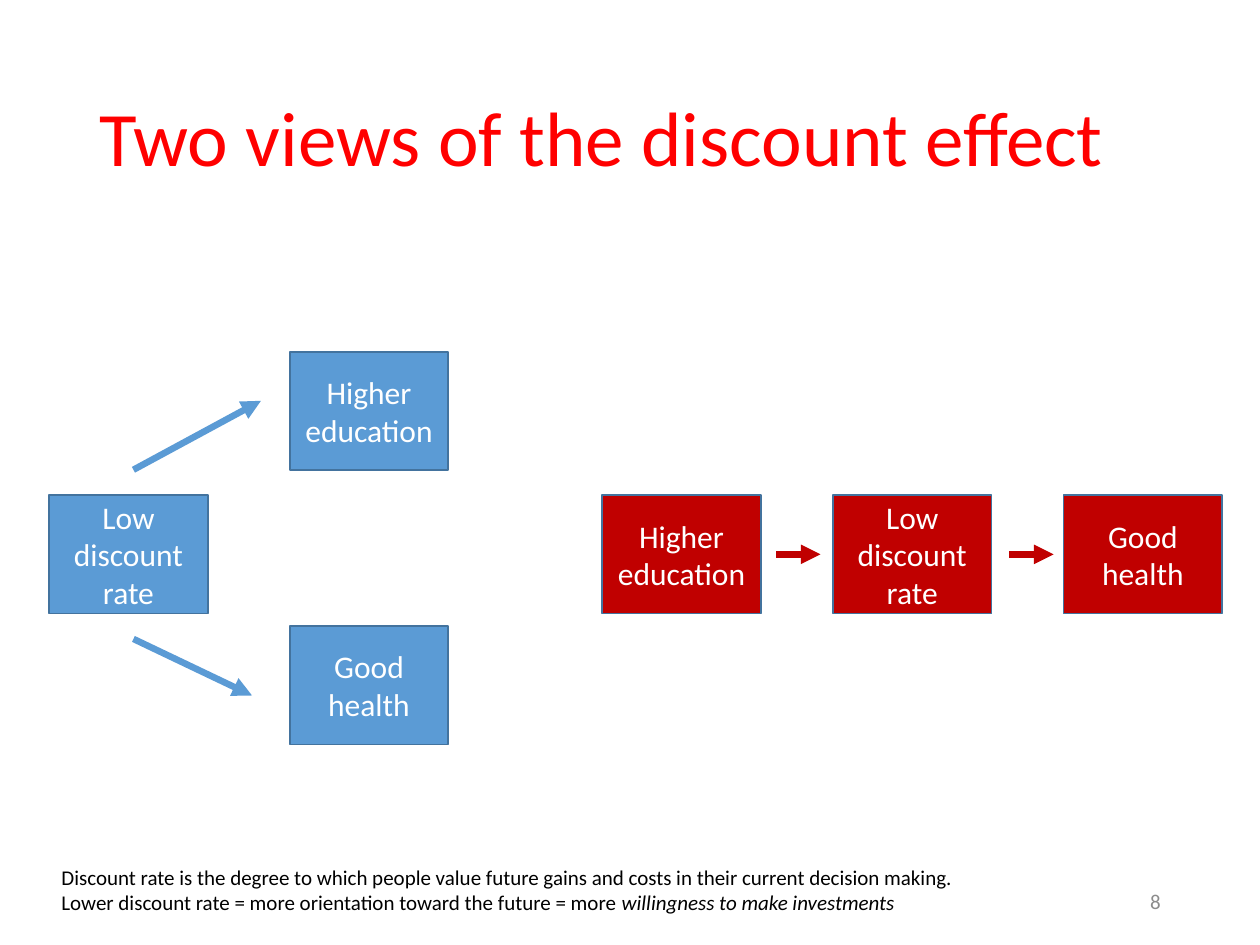
import dataclasses

import pptx
import pptx.dml.color
import pptx.enum.shapes
import pptx.enum.text
import pptx.oxml
import pptx.oxml.ns
import pptx.util
from pptx.util import Cm

ALIGN = pptx.enum.text.PP_ALIGN
ANCHOR = pptx.enum.text.MSO_ANCHOR
BOX_WIDTH, BOX_HEIGHT = 3.2, 2.39


@dataclasses.dataclass(frozen=True)
class Theme:
    font: str = "Calibri"
    title: str = "FF0000"
    blue: str = "5B9BD5"
    red: str = "C00000"
    outline: str = "43739E"
    light: str = "FFFFFF"
    dark: str = "000000"
    muted: str = "8C8C8C"
    title_size: int = 44
    box_size: int = 18
    note_size: int = 12
    outline_width: float = 1
    arrow_width: float = 3.75


THEME = Theme()


def rgb(value):
    return pptx.dml.color.RGBColor.from_string(value)


def add_span(para, text, size, color, italic=False):
    span = para.add_run()
    span.text = text
    span.font.name = THEME.font
    span.font.size = pptx.util.Pt(size)
    span.font.color.rgb = rgb(color)
    if italic:
        span.font.italic = True


def add_text(page, left, top, width, height, anchor=ANCHOR.MIDDLE):
    box = page.shapes.add_textbox(Cm(left), Cm(top), Cm(width), Cm(height))
    box.text_frame.word_wrap = True
    box.text_frame.vertical_anchor = anchor
    return box.text_frame


def add_title(page, text):
    para = add_text(page, 1.75, 1.02, 21.9, 3.68).paragraphs[0]
    para.line_spacing = 0.9
    add_span(para, text, THEME.title_size, THEME.title)


def add_page_number(page, text):
    para = add_text(page, 17.93, 17.65, 5.72, 1.02).paragraphs[0]
    para.alignment = ALIGN.RIGHT
    add_span(para, text, THEME.note_size, THEME.muted)


def add_footnote(page):
    frame = add_text(page, 0.99, 17.3, 22.66, 1.27, ANCHOR.TOP)
    frame.auto_size = pptx.enum.text.MSO_AUTO_SIZE.SHAPE_TO_FIT_TEXT
    first, second = frame.paragraphs[0], frame.add_paragraph()
    add_span(first, "Discount rate is the degree to which people value future gains "
             "and costs in their current decision making.", THEME.note_size, THEME.dark)
    add_span(second, "Lower discount rate = more orientation toward the future = more ",
             THEME.note_size, THEME.dark)
    add_span(second, "willingness to make investments", THEME.note_size, THEME.dark, italic=True)


def add_box(page, text, left, top, color):
    box = page.shapes.add_shape(pptx.enum.shapes.MSO_SHAPE.RECTANGLE,
                                Cm(left), Cm(top), Cm(BOX_WIDTH), Cm(BOX_HEIGHT))
    box.shadow.inherit = False
    box.fill.solid()
    box.fill.fore_color.rgb = rgb(color)
    box.line.color.rgb = rgb(THEME.outline)
    box.line.width = pptx.util.Pt(THEME.outline_width)
    box.text_frame.word_wrap = True
    box.text_frame.vertical_anchor = ANCHOR.MIDDLE
    para = box.text_frame.paragraphs[0]
    para.alignment = ALIGN.CENTER
    add_span(para, text, THEME.box_size, THEME.light)


def add_arrow(page, start, end, color):
    arrow = page.shapes.add_connector(pptx.enum.shapes.MSO_CONNECTOR.STRAIGHT,
                                      *map(Cm, start), *map(Cm, end))
    arrow.line.color.rgb = rgb(color)
    arrow.line.width = pptx.util.Pt(THEME.arrow_width)
    head = pptx.oxml.parse_xml(f'<a:tailEnd {pptx.oxml.ns.nsdecls("a")} type="triangle"/>')
    arrow.line._get_or_add_ln().append(head)
    effects = pptx.oxml.parse_xml(f'<a:effectLst {pptx.oxml.ns.nsdecls("a")}/>')
    arrow._element.spPr.append(effects)


def add_common_cause(page, row_top):
    add_box(page, "Low discount rate", 0.99, row_top, THEME.blue)
    add_box(page, "Higher education", 5.84, 7.09, THEME.blue)
    add_box(page, "Good health", 5.84, 12.62, THEME.blue)
    add_arrow(page, (2.69, 9.47), (5.26, 8.08), THEME.blue)
    add_arrow(page, (2.69, 12.88), (5.08, 14.02), THEME.blue)


def add_causal_chain(page, row_top):
    first_left, step = 12.14, 4.65
    for index, text in enumerate(("Higher education", "Low discount rate", "Good health")):
        add_box(page, text, first_left + index * step, row_top, THEME.red)
    middle = row_top + BOX_HEIGHT / 2
    for left in (15.65, 20.35):
        add_arrow(page, (left, middle), (left + 0.89, middle), THEME.red)


def main():
    deck = pptx.Presentation()
    deck.slide_width, deck.slide_height = Cm(25.4), Cm(19.05)
    page = deck.slides.add_slide(deck.slide_layouts[6])
    row_top = 9.98
    add_title(page, "Two views of the discount effect")
    add_common_cause(page, row_top)
    add_causal_chain(page, row_top)
    add_footnote(page)
    add_page_number(page, "8")
    deck.save("out.pptx")


if __name__ == "__main__":
    main()
